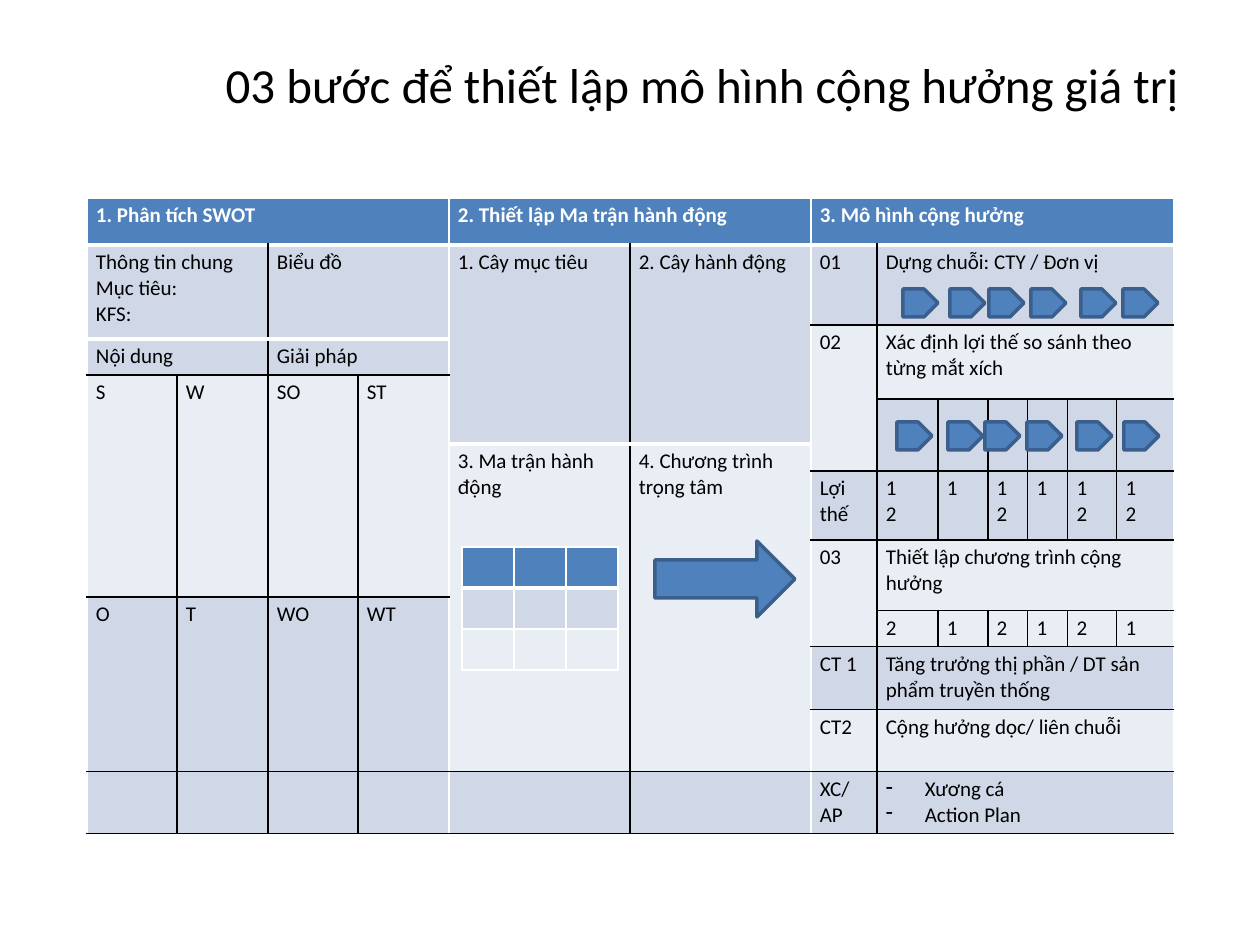
from itertools import accumulate
from lxml import etree
from pptx import Presentation
from pptx import util as u
from pptx.dml.color import RGBColor
from pptx.enum import shapes, text
from pptx.oxml.ns import qn

PX = 914400 // 126
COLORS = {"blue": "4F81BD", "edge": "3A5F8C", "dark": "D0D8E8",
          "light": "E9EDF4", "white": "FFFFFF", "black": "000000"}
TITLE = "03 bước để thiết lập mô hình cộng hưởng giá trị"

# Main grid
LEFT, TOP = 87, 198
COLUMNS = [90, 91, 90, 91, 181, 181, 66, 61, 50, 40, 40, 49, 57]
ROWS = [47, 80, 14, 36, 24, 45, 27, 69, 57, 14, 36, 63, 62, 62]
SECTION_EDGES = {0, 4, 6, 13}
ADVANTAGES = ["1\n2", "1", "1\n2", "1", "1\n2", "1\n2"]
PROGRAMS = ["2", "1", "2", "1", "2", "1"]

# Each region: row, column, row span, column span, fill, text
REGIONS = [
    (0, 0, 1, 4, "blue", "1. Phân tích SWOT"),
    (0, 4, 1, 2, "blue", "2. Thiết lập Ma trận hành động"),
    (0, 6, 1, 7, "blue", "3. Mô hình cộng hưởng"),
    # SWOT
    (1, 0, 2, 2, "dark", "Thông tin chung\nMục tiêu:\nKFS:"),
    (1, 2, 2, 2, "dark", "Biểu đồ"),
    (3, 0, 1, 2, "dark", "Nội dung"),
    (3, 2, 1, 2, "dark", "Giải pháp"),
    *[(4, i, 5, 1, "light", name) for i, name in enumerate(["S", "W", "SO", "ST"])],
    *[(9, i, 4, 1, "dark", name) for i, name in enumerate(["O", "T", "WO", "WT"])],
    # Action matrix
    (1, 4, 5, 1, "dark", "1. Cây mục tiêu"),
    (1, 5, 5, 1, "dark", "2. Cây hành động"),
    (6, 4, 7, 1, "light", "3. Ma trận hành động"),
    (6, 5, 7, 1, "light", "4. Chương trình trọng tâm"),
    *[(13, i, 1, 1, "dark", "") for i in range(6)],
    # Resonance model
    (1, 6, 1, 1, "dark", "01"),
    (1, 7, 1, 6, "dark", "Dựng chuỗi: CTY / Đơn vị"),
    (2, 6, 5, 1, "light", "02"),
    (2, 7, 3, 6, "light", "Xác định lợi thế so sánh theo từng mắt xích"),
    *[(5, 7 + i, 2, 1, "dark", "") for i in range(6)],
    (7, 6, 1, 1, "dark", "Lợi thế"),
    *[(7, 7 + i, 1, 1, "dark", name) for i, name in enumerate(ADVANTAGES)],
    (8, 6, 3, 1, "light", "03"),
    (8, 7, 2, 6, "light", "Thiết lập chương trình cộng hưởng"),
    *[(10, 7 + i, 1, 1, "light", name) for i, name in enumerate(PROGRAMS)],
    (11, 6, 1, 1, "dark", "CT 1"),
    (11, 7, 1, 6, "dark", "Tăng trưởng thị phần / DT sản phẩm truyền thống"),
    (12, 6, 1, 1, "light", "CT2"),
    (12, 7, 1, 6, "light", "Cộng hưởng dọc/ liên chuỗi"),
    (13, 6, 1, 1, "dark", "XC/\nAP"),
    (13, 7, 1, 6, "dark", "- Xương cá\n- Action Plan"),
]
MINI_FILLS = ["blue", "dark", "light"]
MINI_REGIONS = [(row, column, 1, 1, fill, "")
                for row, fill in enumerate(MINI_FILLS) for column in range(3)]

# Chain links: top and left positions
CHAINS = {289: [903, 950, 989, 1031, 1081, 1123],
          422: [897, 948, 985, 1027, 1077, 1124]}


def px(*lengths):
    return [u.Emu(length * PX) for length in lengths]


def rgb(name):
    return RGBColor.from_string(COLORS[name])


def write(frame, content, size=12, color="black", bold=False, align=text.PP_ALIGN.LEFT):
    frame.word_wrap = True
    for i, line in enumerate(content.split("\n")):
        para = frame.paragraphs[0] if i == 0 else frame.add_paragraph()
        para.alignment = align
        if not line:
            etree.SubElement(para._p, qn("a:endParaRPr"), sz=str(size * 100))
            continue
        if line.startswith("- "):
            line = line[2:]
            props = para._p.get_or_add_pPr()
            props.set("marL", str(39 * PX))
            props.set("indent", str(-39 * PX))
            etree.SubElement(props, qn("a:buChar"), char="-")
        span = para.add_run()
        span.text = line
        span.font.name, span.font.size, span.font.bold = "Calibri", u.Pt(size), bold
        span.font.color.rgb = rgb(color)


def set_borders(cell, borders):
    """borders: (side, colour, points) in the order L, R, T, B."""
    props = cell._tc.get_or_add_tcPr()
    for i, (side, color, points) in enumerate(borders):
        line = etree.Element(qn("a:ln" + side), w=str(u.Pt(points)))
        fill = etree.SubElement(line, qn("a:solidFill"))
        etree.SubElement(fill, qn("a:srgbClr"), val=COLORS[color])
        props.insert(i, line)


def add_grid(page, left, top, columns, rows, regions, white_edges, all_white=False):
    frame = page.shapes.add_table(len(rows), len(columns),
                                  *px(left, top, sum(columns), sum(rows)))
    table = frame.table
    table.horz_banding = False
    for track, width in zip(table.columns, px(*columns)):
        track.width = width
    for track, height in zip(table.rows, px(*rows)):
        track.height = height

    def vertical(column, row):
        return "white" if all_white or row == 0 or column in white_edges else "black"

    def horizontal(row):
        return ("white", 3 if row == 1 else 1) if all_white or row < 2 else ("black", 1)

    for row, column, height, width, fill, content in regions:
        bottom, right = row + height, column + width
        for r in range(row, bottom):
            for c in range(column, right):
                cell = table.cell(r, c)
                cell.fill.solid()
                cell.fill.fore_color.rgb = rgb(fill)
                borders = []
                if c == column:
                    borders.append(("L", vertical(column, row), 1))
                if c == right - 1:
                    borders.append(("R", vertical(right, row), 1))
                if r == row:
                    borders.append(("T", *horizontal(row)))
                if r == bottom - 1:
                    borders.append(("B", *horizontal(bottom)))
                set_borders(cell, borders)
        cell = table.cell(row, column)
        if height * width > 1:
            cell.merge(table.cell(bottom - 1, right - 1))
        cell.margin_left, cell.margin_right, cell.margin_top, cell.margin_bottom = px(9, 9, 5, 5)
        header = row == 0
        write(cell.text_frame, content, color="white" if header else "black", bold=header)


def add_arrow(page, kind, *place):
    arrow = page.shapes.add_shape(kind, *px(*place))
    arrow.shadow.inherit = False
    arrow.fill.solid()
    arrow.fill.fore_color.rgb = rgb("blue")
    arrow.line.color.rgb = rgb("edge")
    arrow.line.width = u.Pt(2)


def main():
    deck = Presentation()
    deck.slide_width, deck.slide_height = px(1260, 945)
    page = deck.slides.add_slide(deck.slide_layouts[6])

    # Title
    box = page.shapes.add_textbox(*px(159, 52, 1086, 64))
    box.text_frame.vertical_anchor = text.MSO_ANCHOR.MIDDLE
    write(box.text_frame, TITLE, size=28, align=text.PP_ALIGN.CENTER)

    # Tables
    add_grid(page, LEFT, TOP, COLUMNS, ROWS, REGIONS, SECTION_EDGES)
    add_grid(page, 462, 547, [52] * 3, [41] * 3, MINI_REGIONS, set(), all_white=True)

    # Arrows
    for top, lefts in CHAINS.items():
        for left in lefts:
            add_arrow(page, shapes.MSO_SHAPE.PENTAGON, left, top, 35, 28)
    add_arrow(page, shapes.MSO_SHAPE.RIGHT_ARROW, 655, 541, 140, 76)

    deck.save("out.pptx")


if __name__ == "__main__":
    main()
